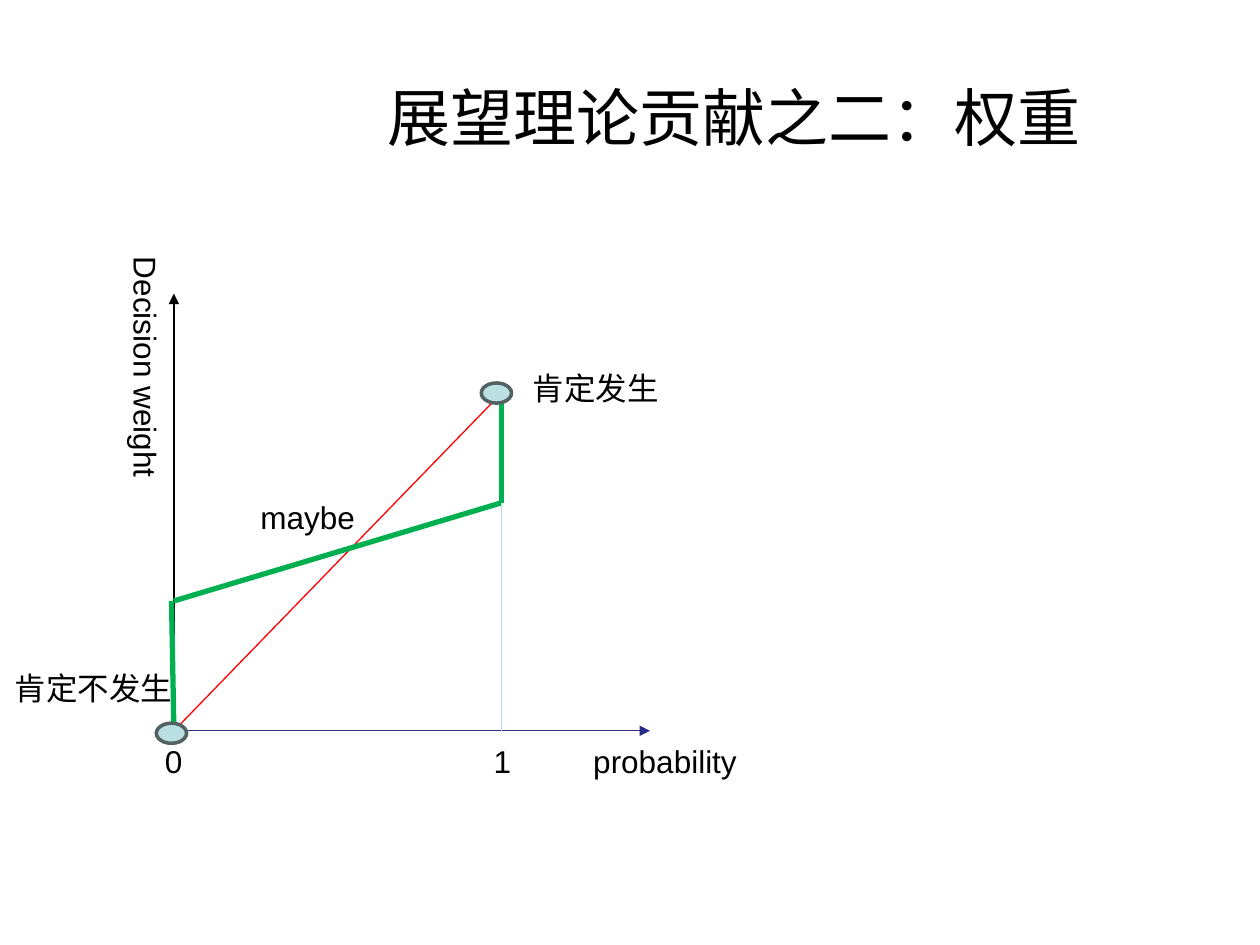
from lxml import etree
from pptx import Presentation
from pptx.dml.color import RGBColor
from pptx.enum.shapes import MSO_CONNECTOR, MSO_SHAPE
from pptx.enum.text import MSO_ANCHOR, PP_ALIGN
from pptx.oxml.ns import qn
from pptx.util import Pt

STRAIGHT, ELLIPSE = MSO_CONNECTOR.STRAIGHT, MSO_SHAPE.OVAL
MIDDLE, TOP = MSO_ANCHOR.MIDDLE, MSO_ANCHOR.TOP
LEFT, CENTER = PP_ALIGN.LEFT, PP_ALIGN.CENTER

FONT = "Arial"
COLORS = {
    "text": "000000", "axis_x": "2A2A89", "axis_y": "000000",
    "diagonal": "FF0000", "weight": "00B050", "guide": "B6DCDF",
    "marker": "BBE0E3", "marker_edge": "526263",
}

# Chart coordinates: probability 0 and 1 across, decision weights down
X0, X1, X_END = 99.4, 286.6, 371.5
Y0, Y1, Y_END = 417.6, 224.6, 167.8
LOW_WEIGHT, HIGH_WEIGHT = 343.4, 287.3

# Start, end, colour, width, arrowhead
LINES = [
    ((X0, Y0), (X_END, Y0), "axis_x", 0.75, True),
    ((X0, Y0), (X0, Y_END), "axis_y", 0.75, True),
    ((X0, Y0), (X1, Y1), "diagonal", 0.75, False),
    ((X0, LOW_WEIGHT), (X1, HIGH_WEIGHT), "weight", 3, False),
    ((X1, Y1), (X1, Y0), "guide", 0.75, False),
    ((X0 - 1.4, LOW_WEIGHT), (X0, Y0), "weight", 3, False),
    ((X1, Y1), (X1, HIGH_WEIGHT), "weight", 3, False),
]

# Marker centres and size
MARKERS = [(283.7, 224.6), (98, 419)]
MARKER_WIDTH, MARKER_HEIGHT = 17.3, 11.5

# Text, box (left, top, width, height), format
TEXTS = [
    ("展望理论贡献之二：权重", (203.5, 21.6, 432, 90),
     {"size": 36, "align": CENTER, "anchor": MIDDLE}),
    ("probability", (331.9, 420.5, 97.2, 28.8), {"wrap": False}),
    ("Decision weight", (61.9, 139.7, 36, 169.9), {"direction": "eaVert"}),
    ("0", (87.1, 420.5, 39.6, 28.8), {}),
    ("1", (275, 420.5, 39.6, 28.8), {}),
    ("肯定发生", (297.4, 207.4, 108, 28.8), {}),
    ("肯定不发生", (1.4, 378.7, 133.2, 28.8), {}),
    ("maybe", (141.8, 280.8, 108, 28.8), {}),
]


def color(name):
    return RGBColor.from_string(COLORS[name])


def add_text(slide, text, box, size=18, align=LEFT, anchor=TOP, wrap=True, direction=None):
    shape = slide.shapes.add_textbox(*map(Pt, box))
    frame = shape.text_frame
    frame.word_wrap = wrap
    frame.vertical_anchor = anchor
    if direction:
        frame._txBody.bodyPr.set("vert", direction)
    paragraph = frame.paragraphs[0]
    paragraph.alignment = align
    run = paragraph.add_run()
    run.text = text
    run.font.name = FONT
    run.font.size = Pt(size)
    run.font.color.rgb = color("text")


def add_line(slide, start, end, color_name, width, arrow):
    connector = slide.shapes.add_connector(STRAIGHT, *map(Pt, start + end))
    connector.line.color.rgb = color(color_name)
    connector.line.width = Pt(width)
    if arrow:
        etree.SubElement(connector.line._get_or_add_ln(), qn("a:tailEnd"), type="triangle")
    etree.SubElement(connector._element.spPr, qn("a:effectLst"))


def add_marker(slide, center_x, center_y):
    shape = slide.shapes.add_shape(
        ELLIPSE, Pt(center_x - MARKER_WIDTH / 2), Pt(center_y - MARKER_HEIGHT / 2),
        Pt(MARKER_WIDTH), Pt(MARKER_HEIGHT))
    shape.shadow.inherit = False
    shape.fill.solid()
    shape.fill.fore_color.rgb = color("marker")
    shape.line.color.rgb = color("marker_edge")
    shape.line.width = Pt(2)


def main():
    presentation = Presentation()
    presentation.slide_width, presentation.slide_height = Pt(720), Pt(540)
    slide = presentation.slides.add_slide(presentation.slide_layouts[6])

    # Axes and curves, then end points, then labels
    for line in LINES:
        add_line(slide, *line)
    for center in MARKERS:
        add_marker(slide, *center)
    for text, box, text_format in TEXTS:
        add_text(slide, text, box, **text_format)

    presentation.save("out.pptx")


if __name__ == "__main__":
    main()
